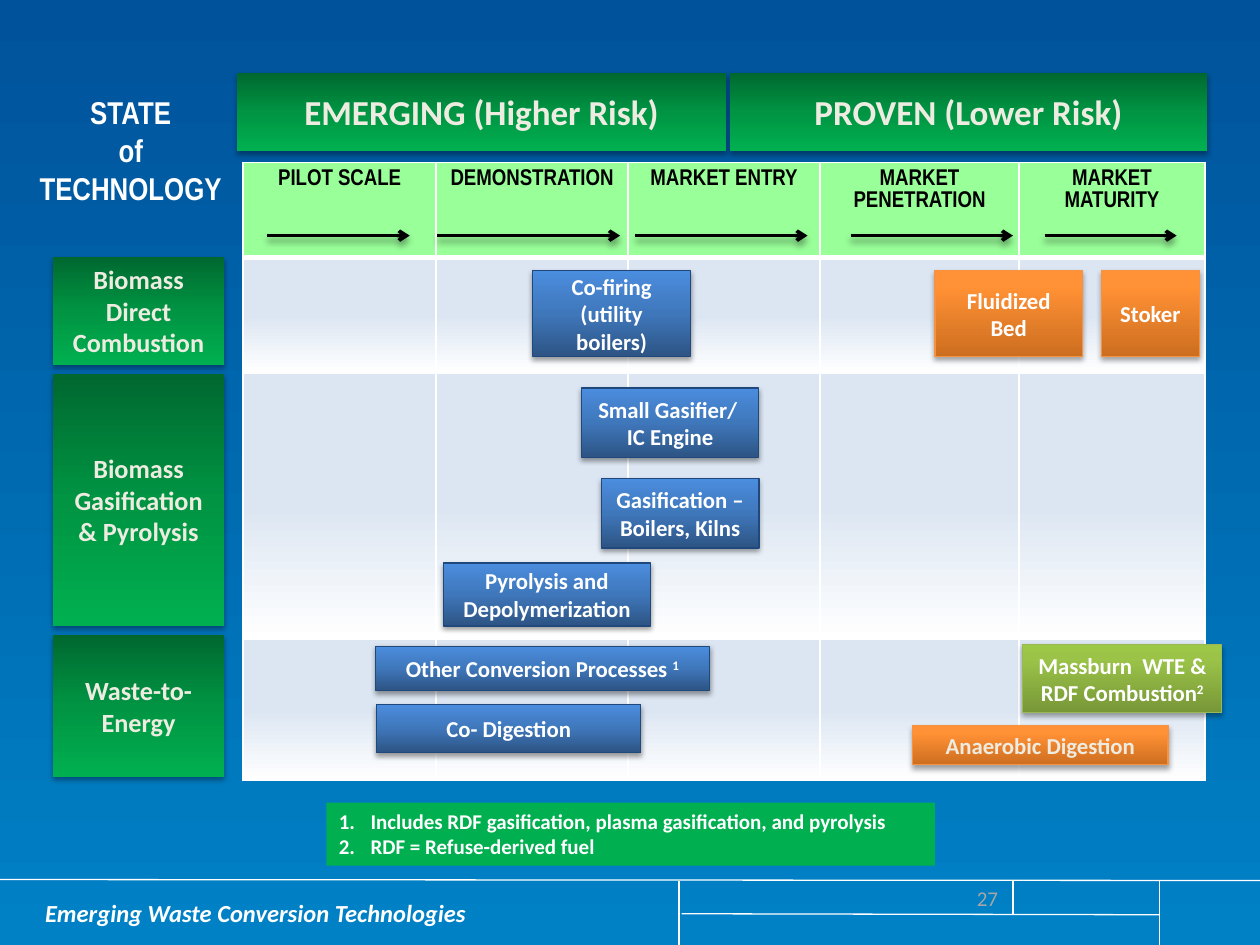
from dataclasses import dataclass
from typing import NamedTuple

from lxml import etree
from pptx import Presentation
from pptx.dml.color import RGBColor
from pptx.enum.shapes import MSO_CONNECTOR, MSO_SHAPE
from pptx.enum.text import MSO_ANCHOR, PP_ALIGN
from pptx.oxml import parse_xml
from pptx.oxml.ns import nsdecls, qn
from pptx.util import Cm, Pt

RECT, STRAIGHT = MSO_SHAPE.RECTANGLE, MSO_CONNECTOR.STRAIGHT
LEFT, CENTER, RIGHT = PP_ALIGN.LEFT, PP_ALIGN.CENTER, PP_ALIGN.RIGHT
TOP, MIDDLE = MSO_ANCHOR.TOP, MSO_ANCHOR.MIDDLE


class Shadow(NamedTuple):
    alpha: int
    blur: float
    dist: float


class Paint(NamedTuple):
    """Gradient stops run from top to bottom."""
    stops: tuple
    line: str | None = None
    shadow: Shadow | None = None


class Style(NamedTuple):
    size: int
    color: str = "FFFFFF"
    name: str = "Calibri"
    bold: bool = True
    italic: bool = False


class Box(NamedTuple):
    """A caret in the text starts a superscript."""
    x: float
    y: float
    w: float
    h: float
    text: str
    paint: Paint
    style: Style


@dataclass(frozen=True)
class Theme:
    white: str = "FFFFFF"
    black: str = "000000"
    header_fill: str = "99FF99"
    note_fill: str = "00B050"
    soft: Shadow = Shadow(35, 3.1, 1.8)
    arrow_shadow: Shadow = Shadow(40, 4, 3)
    backdrop: Paint = Paint(((0, "00539B"), (100, "0081C6")))
    cell: Paint = Paint(((0, "DCE6F2"), (50, "DCE6F2"), (100, "FFFFFF")))
    green: Paint = Paint(((0, "00682F"), (50, "009443"), (100, "00B050")), None, soft)
    blue: Paint = Paint(((0, "4B8DDE"), (50, "3F77BB"), (100, "2D5484")), "1F497D",
                        Shadow(38, 3.1, 1.6))
    orange: Paint = Paint(((0, "FF9136"), (20, "FF9034"), (100, "CC6E20")), "F69240", soft)
    lime: Paint = Paint(((0, "9DC746"), (20, "9BC348"), (100, "779737")), "98B955", soft)
    banner: Style = Style(20, "EEECE1")
    row: Style = Style(15, "EEECE1")
    tech: Style = Style(13)
    tech_cream: Style = Style(13, "EEECE1")
    stage: Style = Style(13, "000000", "Arial Narrow")
    corner: Style = Style(18, name="Arial Narrow")
    note: Style = Style(12)
    footer: Style = Style(14, italic=True)
    number: Style = Style(12, "A6A6A6", bold=False)


T = Theme()
STAGES = ("PILOT SCALE", "DEMONSTRATION", "MARKET ENTRY", "MARKET PENETRATION", "MARKET MATURITY")
COLS = (3.89, 3.87, 3.87, 4.01, 3.75)
ROWS = (1.91, 2.34, 5.36, 2.84)
ARROW_Y = 4.75
ARROWS = ((5.38, 8.26), (8.81, 12.5), (12.8, 16.28), (17.15, 20.42), (21.06, 23.72))
RULES = ((0, 17.73, 25.4, 17.75), (13.74, 18.42, 23.37, 18.44), (13.69, 19.05, 13.69, 17.75),
         (23.37, 19.05, 23.37, 17.75), (20.42, 17.73, 20.42, 18.44))
ROW_HEADS = ((5.18, 2.18, "Biomass Direct Combustion"),
             (7.54, 5.08, "Biomass Gasification & Pyrolysis"),
             (12.8, 2.87, "Waste-to- Energy"))
BOXES = (
    Box(22.2, 5.46, 1.98, 1.73, "Stoker", T.orange, T.tech),
    Box(10.74, 5.46, 3.18, 1.73, "Co-firing\n(utility boilers)", T.blue, T.tech),
    Box(18.85, 5.46, 2.97, 1.73, "Fluidized Bed", T.orange, T.tech),
    Box(11.73, 7.82, 3.56, 1.4, "Small Gasifier/ \nIC Engine", T.blue, T.tech),
    Box(12.12, 9.65, 3.18, 1.4, "Gasification – Boilers, Kilns", T.blue, T.tech),
    Box(8.94, 11.35, 4.17, 1.27, "Pyrolysis and Depolymerization", T.blue, T.tech),
    Box(7.57, 13.03, 6.73, 0.89, "Other Conversion Processes ^1", T.blue, T.tech),
    Box(20.62, 13, 4.01, 1.37, "Massburn  WTE & RDF Combustion^2", T.lime, T.tech),
    *(Box(1.07, y, 3.45, h, text, T.green, T.row) for y, h, text in ROW_HEADS),
    Box(4.78, 1.47, 9.86, 1.57, "EMERGING (Higher Risk)", T.green, T.banner),
    Box(14.71, 1.47, 9.63, 1.57, "PROVEN (Lower Risk)", T.green, T.banner),
    Box(7.59, 14.2, 5.33, 0.97, "Co- Digestion", T.blue, T.tech),
    Box(18.39, 14.63, 5.16, 0.79, "Anaerobic Digestion", T.orange, T.tech_cream),
)


def rgb(color: str) -> RGBColor:
    return RGBColor.from_string(color)


def fill_gradient(fill, holder, paint: Paint) -> None:
    fill.gradient()
    fill.gradient_angle = 270
    stops = holder.find(qn("a:gradFill")).find(qn("a:gsLst"))
    for stop in list(stops):
        stops.remove(stop)
    for pos, color in paint.stops:
        gs = etree.SubElement(stops, qn("a:gs"), pos=str(pos * 1000))
        etree.SubElement(gs, qn("a:srgbClr"), val=color)


def set_effects(sp_pr, shadow: Shadow | None) -> None:
    effects = etree.SubElement(sp_pr, qn("a:effectLst"))
    if shadow:
        outer = etree.SubElement(effects, qn("a:outerShdw"), blurRad=str(Pt(shadow.blur)),
                                 dist=str(Pt(shadow.dist)), dir="5400000", rotWithShape="0")
        clr = etree.SubElement(outer, qn("a:srgbClr"), val=T.black)
        etree.SubElement(clr, qn("a:alpha"), val=str(shadow.alpha * 1000))


def write(tf, text: str, style: Style, align=CENTER, anchor=MIDDLE) -> None:
    tf.word_wrap, tf.vertical_anchor = True, anchor
    formats = {"name": style.name, "size": Pt(style.size),
               "bold": style.bold, "italic": style.italic}
    for i, line in enumerate(text.split("\n")):
        p = tf.add_paragraph() if i else tf.paragraphs[0]
        p.alignment = align
        for j, part in enumerate(line.split("^")):
            r = p.add_run()
            r.text = part
            for key, value in formats.items():
                setattr(r.font, key, value)
            r.font.color.rgb = rgb(style.color)
            if j:
                r.font._element.set("baseline", "30000")


def add_rect(s, x: float, y: float, w: float, h: float, paint: Paint | str):
    sp = s.shapes.add_shape(RECT, Cm(x), Cm(y), Cm(w), Cm(h))
    sp_pr = sp._element.spPr
    shadow = line = None
    if isinstance(paint, Paint):
        fill_gradient(sp.fill, sp_pr, paint)
        line, shadow = paint.line, paint.shadow
    else:
        sp.fill.solid()
        sp.fill.fore_color.rgb = rgb(paint)
    if line:
        sp.line.color.rgb, sp.line.width = rgb(line), Pt(0.75)
    else:
        sp.line.fill.background()
    set_effects(sp_pr, shadow)
    return sp


def add_box(s, box: Box) -> None:
    write(add_rect(s, *box[:4], box.paint).text_frame, box.text, box.style)


def add_line(s, ends: tuple, color: str, width: float, shadow: Shadow | None = None,
             arrow: bool = False) -> None:
    cxn = s.shapes.add_connector(STRAIGHT, *map(Cm, ends))
    cxn.line.color.rgb, cxn.line.width = rgb(color), Pt(width)
    if arrow:
        etree.SubElement(cxn.line._get_or_add_ln(), qn("a:tailEnd"), type="arrow")
    set_effects(cxn._element.spPr, shadow)


def add_label(s, frame: tuple, text: str, style: Style, align=CENTER, anchor=MIDDLE) -> None:
    write(s.shapes.add_textbox(*map(Cm, frame)).text_frame, text, style, align, anchor)


def add_grid(s) -> None:
    table = s.shapes.add_table(len(ROWS), len(COLS), Cm(4.9), Cm(3.28),
                               Cm(sum(COLS)), Cm(sum(ROWS))).table
    table.first_row = table.horz_banding = False
    for col, width in zip(table.columns, COLS):
        col.width = Cm(width)
    for i, (row, height) in enumerate(zip(table.rows, ROWS)):
        row.height = Cm(height)
        for cell, stage in zip(row.cells, STAGES):
            tc_pr = cell._tc.get_or_add_tcPr()
            if i == 0:
                cell.fill.solid()
                cell.fill.fore_color.rgb = rgb(T.header_fill)
                write(cell.text_frame, stage, T.stage, anchor=TOP)
            else:
                fill_gradient(cell.fill, tc_pr, T.cell)
            widths = {"L": 1, "R": 1, "T": 3 if i == 1 else 1, "B": 3 if i == 0 else 1}
            for k, (side, width) in enumerate(widths.items()):
                tc_pr.insert(k, parse_xml(
                    f'<a:ln{side} {nsdecls("a")} w="{Pt(width)}"><a:solidFill>'
                    f'<a:srgbClr val="{T.white}"/></a:solidFill></a:ln{side}>'))


def add_notes_box(s) -> None:
    tf = add_rect(s, 6.58, 16.18, 12.27, 1.27, T.note_fill).text_frame
    write(tf, "Includes RDF gasification, plasma gasification, and pyrolysis\n"
              "RDF = Refuse-derived fuel", T.note, LEFT, TOP)
    for p in tf.paragraphs:
        p_pr = p._p.get_or_add_pPr()
        p_pr.set("marL", str(Cm(0.64)))
        p_pr.set("indent", str(-Cm(0.64)))
        etree.SubElement(p_pr, qn("a:buFont"), typeface="+mj-lt")
        etree.SubElement(p_pr, qn("a:buAutoNum"), type="arabicPeriod")


def main() -> None:
    prs = Presentation()
    prs.slide_width, prs.slide_height = Cm(25.4), Cm(19.05)
    s = prs.slides.add_slide(prs.slide_layouts[6])
    add_rect(s, 0, 0, 25.4, 19.05, T.backdrop)
    for ends in RULES:
        add_line(s, ends, T.white, 0.75)
    add_grid(s)
    for box in BOXES:
        add_box(s, box)
    for start, end in ARROWS:
        add_line(s, (start, ARROW_Y, end, ARROW_Y), T.black, 2, T.arrow_shadow, True)
    add_notes_box(s)
    add_label(s, (0.36, 1.75, 4.55, 2.57), "STATE\nof\nTECHNOLOGY", T.corner, anchor=TOP)
    add_label(s, (0.66, 17.78, 13, 1.24), "Emerging Waste Conversion Technologies", T.footer, LEFT)
    add_label(s, (18.31, 17.81, 2.06, 0.58), "27", T.number, RIGHT)
    prs.save("out.pptx")


if __name__ == "__main__":
    main()
